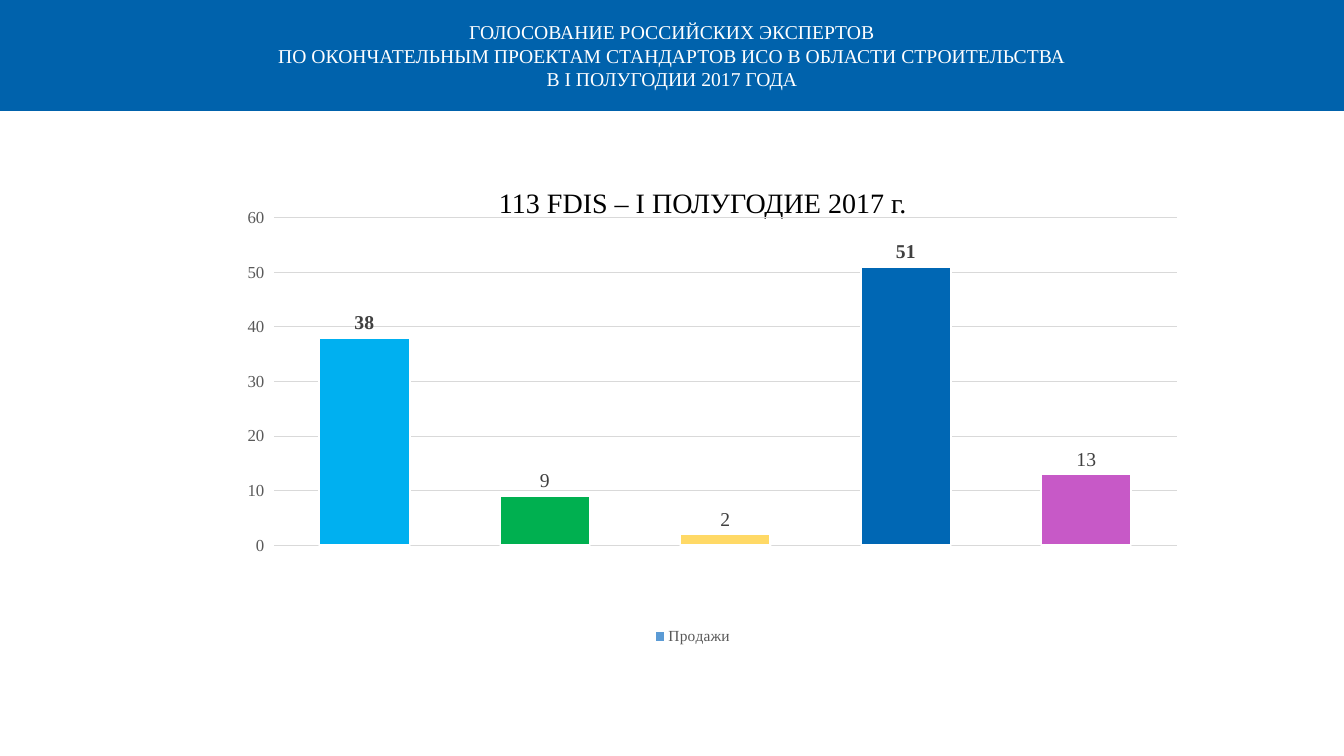
from dataclasses import dataclass

from lxml.etree import SubElement
from pptx import Presentation
from pptx.chart.chart import Chart
from pptx.chart.data import CategoryChartData as Data
from pptx.dml.color import RGBColor
from pptx.enum.chart import XL_CHART_TYPE as Kind
from pptx.enum.chart import XL_LABEL_POSITION as Spot
from pptx.enum.chart import XL_LEGEND_POSITION as Side
from pptx.enum.chart import XL_TICK_MARK as Tick
from pptx.enum.text import MSO_ANCHOR as Anchor
from pptx.enum.text import MSO_AUTO_SIZE as Fit
from pptx.enum.text import PP_ALIGN as Align
from pptx.oxml.ns import qn
from pptx.text.text import Font
from pptx.util import Inches, Pt

FACE = "Times New Roman"


@dataclass
class Box:
    left: float
    top: float
    width: float
    height: float

    def place(self) -> list[int]:
        return [Inches(n) for n in (self.left, self.top, self.width, self.height)]


@dataclass
class Bar:
    value: int
    color: str
    bold: bool = False


FRAME = Box(0.8, 1.69, 12.13, 5.51)
PLOT = Box(2.72, 2.16, 8.95, 3.25)
LEGEND = Box(6.42, 6.19, 0.9, 0.25)
BARS = [
    Bar(38, "00B0F0", bold=True),
    Bar(9, "00B050"),
    Bar(2, "FFD966"),
    Bar(51, "0067B4", bold=True),
    Bar(13, "C759C7"),
]


def paint(target, color: str) -> None:
    """Give a fill or a line one solid colour."""
    if hasattr(target, "solid"):
        target.solid()
        target.fore_color.rgb = RGBColor.from_string(color)
    else:
        paint(target.fill, color)


def style(font: Font, size: float, color: str, bold: bool = False) -> None:
    font.name = FACE
    font.size = Pt(size)
    font.bold = bold
    paint(font.fill, color)


def lay_out(node, box: Box, inner: bool = False) -> None:
    """Pin a chart part to a box given in slide inches."""
    for old in node.findall(qn("c:layout")):
        node.remove(old)
    layout = SubElement(node, qn("c:layout"))
    # The layout comes first in a plot area, after the position in a legend
    node.insert(0 if inner else 1, layout)
    manual = SubElement(layout, qn("c:manualLayout"))
    parts = {"layoutTarget": "inner"} if inner else {}
    parts |= {
        "xMode": "edge",
        "yMode": "edge",
        "x": (box.left - FRAME.left) / FRAME.width,
        "y": (box.top - FRAME.top) / FRAME.height,
        "w": box.width / FRAME.width,
        "h": box.height / FRAME.height,
    }
    for tag, value in parts.items():
        SubElement(manual, qn(f"c:{tag}")).set("val", str(value))


def add_title(slide) -> None:
    title = slide.shapes.title
    title.left, title.top, title.width, title.height = Box(0, 0, 13.33, 1.1).place()
    paint(title.fill, "0062AC")
    frame = title.text_frame
    frame.text = (
        "ГОЛОСОВАНИЕ РОССИЙСКИХ ЭКСПЕРТОВ\n"
        "ПО ОКОНЧАТЕЛЬНЫМ ПРОЕКТАМ СТАНДАРТОВ ИСО В ОБЛАСТИ СТРОИТЕЛЬСТВА\n"
        "В I ПОЛУГОДИИ 2017 ГОДА"
    )
    frame.auto_size = Fit.NONE
    frame.vertical_anchor = Anchor.MIDDLE
    for line in frame.paragraphs:
        line.alignment = Align.CENTER
        style(line.font, 14, "FFFFFF")


def add_head(slide) -> None:
    frame = slide.shapes.add_textbox(*Box(4.85, 1.79, 4.28, 0.44).place()).text_frame
    frame.word_wrap = False
    frame.text = "113 FDIS – I ПОЛУГОДИЕ 2017 г."
    style(frame.paragraphs[0].font, 20, "000000")


def set_axes(chart: Chart) -> None:
    chart.category_axis.visible = False
    axis = chart.value_axis
    axis.minimum_scale, axis.maximum_scale, axis.major_unit = 0, 60, 10
    axis.major_tick_mark = Tick.OUTSIDE
    axis.format.line.fill.background()
    style(axis.tick_labels.font, 12, "595959")
    grid = axis.major_gridlines.format.line
    paint(grid, "D9D9D9")
    grid.width = Pt(0.75)


def set_bars(chart: Chart) -> None:
    plot = chart.plots[0]
    plot.gap_width = 100
    plot.vary_by_categories = False
    series = plot.series[0]
    paint(series.format.fill, "5B9BD5")
    labels = series.data_labels
    labels.show_value = True
    labels.position = Spot.OUTSIDE_END
    style(labels.font, 14, "404040")
    for i, bar in enumerate(BARS):
        point = series.points[i]
        paint(point.format.fill, bar.color)
        for edge in (series.format.line, point.format.line):
            paint(edge, "FFFFFF")
            edge.width = Pt(1.5)
        if bar.bold:
            style(point.data_label.font, 14, "404040", bold=True)
            point.data_label.position = Spot.OUTSIDE_END


def add_chart(slide) -> None:
    data = Data()
    data.categories = [str(i + 1) for i in range(len(BARS))]
    data.add_series("Продажи", [bar.value for bar in BARS])
    chart = slide.shapes.add_chart(Kind.COLUMN_CLUSTERED, *FRAME.place(), data).chart
    chart.has_title = False
    chart.font.name = "Calibri"
    chart.font.size = Pt(10)
    set_axes(chart)
    set_bars(chart)

    # Legend and plot places
    chart.has_legend = True
    legend = chart.legend
    legend.position = Side.BOTTOM
    legend.include_in_layout = False
    style(legend.font, 11, "595959")
    area = chart.element.find(f".//{qn('c:plotArea')}")
    lay_out(area, PLOT, inner=True)
    lay_out(chart.element.find(f".//{qn('c:legend')}"), LEGEND)


def main() -> None:
    deck = Presentation()
    deck.slide_width, deck.slide_height = Inches(13.33), Inches(7.5)
    slide = deck.slides.add_slide(deck.slide_layouts.get_by_name("Title Only"))
    add_title(slide)
    add_head(slide)
    add_chart(slide)
    deck.save("out.pptx")


if __name__ == "__main__":
    main()
